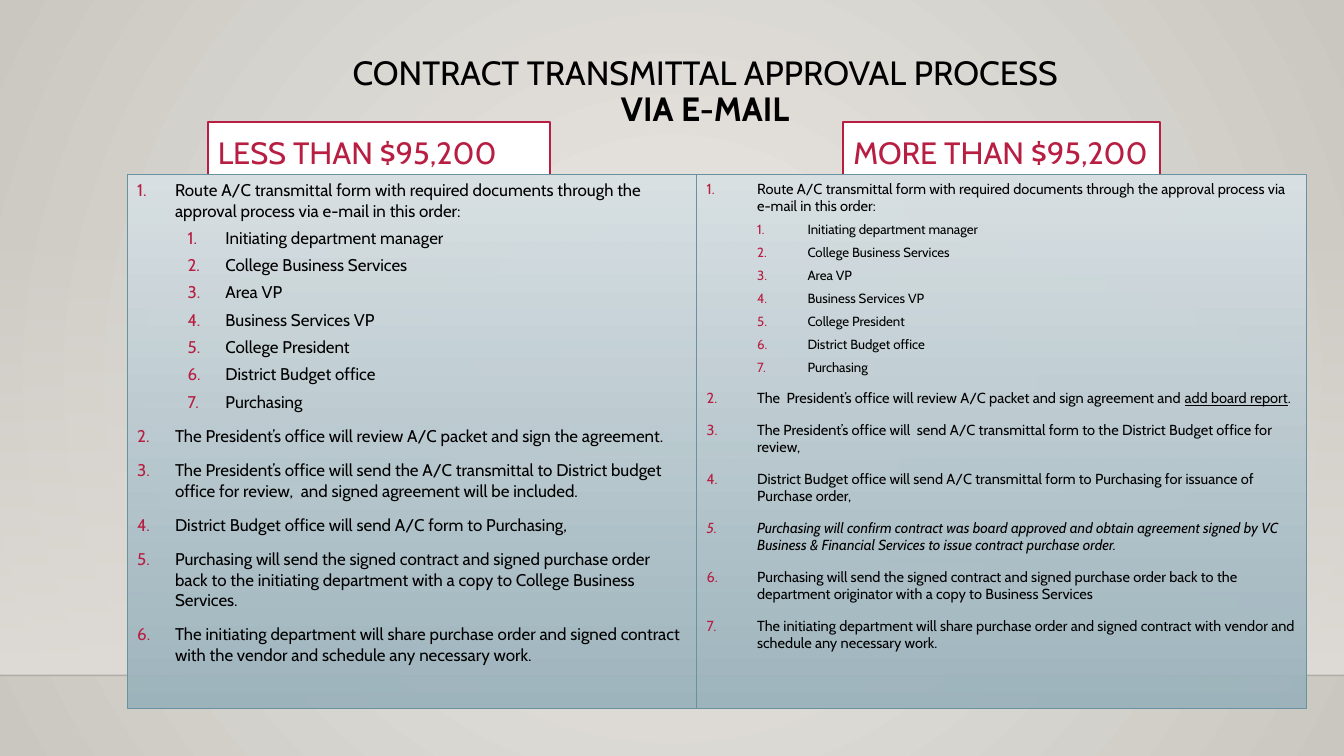
import pptx
import pptx.util
import pptx.dml.color
import pptx.enum.text
import pptx.enum.shapes
import pptx.oxml.ns
from lxml import etree

Pt = pptx.util.Pt
qn = pptx.oxml.ns.qn

FONT = "Cabin"
RED = "B71E42"
SLIDE_W, SLIDE_H = 960, 540
FLOOR_TOP, FLOOR_BOTTOM = 159, 482.4
HEADING_TOP, HEADING_H = 87.2, 38
PANEL_TOP, PANEL_H = 124.8, 381.6

TITLE = ("CONTRACT TRANSMITTAL APPROVAL PROCESS", "VIA E-MAIL")
ROUTE = ("Route A/C transmittal form with required documents through the "
         "approval process via e-mail in this order:")
APPROVERS = ["Initiating department manager", "College Business Services", "Area VP",
             "Business Services VP", "College President", "District Budget office",
             "Purchasing"]

COLUMNS = [
    {"heading": "LESS THAN $95,200", "heading_x": 148.4, "heading_w": 244.4,
     "x": 90.8, "w": 406.8, "indent": 27, "size": 12.1, "sub_size": 12.1,
     "steps": [
         [("The President’s office will review A/C packet and sign the agreement.", "")],
         [("The President’s office will send the A/C transmittal to District budget "
           "office for review,  and signed agreement will be included.", "")],
         [("District Budget office will send A/C form to Purchasing,", "")],
         [("Purchasing will send the signed contract and signed purchase order back to "
           "the initiating department with a copy to College Business Services.", "")],
         [("The initiating department will share purchase order and signed contract "
           "with the vendor and schedule any necessary work.", "")],
     ]},
    {"heading": "MORE THAN $95,200", "heading_x": 602.3, "heading_w": 226.3,
     "x": 497.6, "w": 435.6, "indent": 36, "size": 10.4, "sub_size": 9.5,
     "steps": [
         [("The  President’s office will review A/C packet and sign agreement and ", ""),
          ("add board report", "u"), (".", "")],
         [("The President’s office will  send A/C transmittal form to the District "
           "Budget office for review,", "")],
         [("District Budget office will send A/C transmittal form to Purchasing for "
           "issuance of Purchase order,", "")],
         [("Purchasing will confirm contract was board approved and obtain agreement "
           "signed by VC Business & Financial Services to issue contract purchase "
           "order.", "i")],
         [("Purchasing will send the signed contract and signed purchase order back to "
           "the department originator with a copy to Business Services", "")],
         [("The initiating department will share purchase order and signed contract "
           "with vendor and schedule any necessary work.", "")],
     ]},
]


def rgb(value):
    return pptx.dml.color.RGBColor.from_string(value)


def place(sp, x, y, w, h):
    sp.left, sp.top, sp.width, sp.height = Pt(x), Pt(y), Pt(w), Pt(h)


def gradient(fill, *colors):
    fill.gradient()
    fill.gradient_angle = 270
    for stop, color in zip(fill.gradient_stops, colors):
        stop.color.rgb = rgb(color)


def set_alpha(sp, color, percent):
    for el in sp.element.iter(qn("a:srgbClr")):
        if el.get("val") == color:
            etree.SubElement(el, qn("a:alpha")).set("val", str(percent * 1000))


def outline(sp, color, width):
    sp.line.color.rgb = rgb(color)
    sp.line.width = Pt(width)


def add_run(p, text, size, color="000000", style=""):
    r = p.add_run()
    r.text = text
    r.font.name = FONT
    r.font.size = Pt(size)
    r.font.color.rgb = rgb(color)
    r.font.bold = "b" in style
    r.font.italic = "i" in style
    r.font.underline = "u" in style


def frame(sp, anchor):
    tf = sp.text_frame
    tf.word_wrap = True
    tf.auto_size = pptx.enum.text.MSO_AUTO_SIZE.NONE
    tf.vertical_anchor = anchor
    return tf


def number(p, level, indent):
    pPr = p._p.get_or_add_pPr()
    pPr.set("marL", str(Pt(indent + 36 * level)))
    pPr.set("indent", str(-Pt(indent)))
    color = etree.SubElement(pPr, qn("a:buClr"))
    etree.SubElement(color, qn("a:srgbClr")).set("val", RED)
    etree.SubElement(pPr, qn("a:buFont")).set("typeface", "+mj-lt")
    etree.SubElement(pPr, qn("a:buAutoNum")).set("type", "arabicPeriod")
    p.level = level


def fill_panel(tf, col):
    items = [(0, [(ROUTE, "")])]
    items += [(1, [(name, "")]) for name in APPROVERS]
    items += [(0, step) for step in col["steps"]]
    for i, (level, runs) in enumerate(items):
        p = tf.add_paragraph() if i else tf.paragraphs[0]
        number(p, level, col["indent"])
        p.space_before = Pt((5 if level else 10) if i else 0)
        for text, style in runs:
            add_run(p, text, col["sub_size" if level else "size"], style=style)


def add_backdrop(s, title):
    fill = s.background.fill
    gradient(fill, "ECEAE7", "CAC7C1")
    lin = next(s.element.iter(qn("a:lin")))
    radial = etree.Element(qn("a:path"))
    radial.set("path", "circle")
    rect = etree.SubElement(radial, qn("a:fillToRect"))
    for side in "ltrb":
        rect.set(side, "50000")
    lin.getparent().replace(lin, radial)

    wall = s.shapes.add_shape(pptx.enum.shapes.MSO_SHAPE.RECTANGLE, 0, Pt(FLOOR_TOP),
                              Pt(SLIDE_W), Pt(FLOOR_BOTTOM - FLOOR_TOP))
    wall.shadow.inherit = False
    wall.line.fill.background()
    gradient(wall.fill, "DFDBD6", "DFDBD5")
    set_alpha(wall, "DFDBD6", 0)
    edge = s.shapes.add_connector(pptx.enum.shapes.MSO_CONNECTOR.STRAIGHT, 0,
                                  Pt(FLOOR_BOTTOM), Pt(SLIDE_W), Pt(FLOOR_BOTTOM))
    outline(edge, "000001", 1)
    set_alpha(edge, "000001", 20)
    etree.SubElement(edge.element.spPr, qn("a:effectLst"))
    for sp in (wall, edge):
        title.element.addprevious(sp.element)


def main():
    prs = pptx.Presentation()
    prs.slide_width, prs.slide_height = Pt(SLIDE_W), Pt(SLIDE_H)
    s = prs.slides.add_slide(prs.slide_layouts[4])
    anchors = pptx.enum.text.MSO_ANCHOR

    title = s.shapes.title
    add_backdrop(s, title)
    place(title, 125.3, 36.7, 756.7, 67)
    p = frame(title, anchors.TOP).paragraphs[0]
    p.alignment = pptx.enum.text.PP_ALIGN.CENTER
    p.line_spacing = 0.9
    add_run(p, TITLE[0], 24)
    p.add_line_break()
    add_run(p, TITLE[1], 24, style="b")

    for i, col in enumerate(COLUMNS):
        heading, panel = (s.placeholders[2 * i + k] for k in (1, 2))
        place(heading, col["heading_x"], HEADING_TOP, col["heading_w"], HEADING_H)
        heading.fill.solid()
        heading.fill.fore_color.rgb = rgb("FFFFFF")
        outline(heading, RED, 1.25)
        p = frame(heading, anchors.BOTTOM).paragraphs[0]
        p.space_before = Pt(0)
        add_run(p, col["heading"], 22, RED)

        place(panel, col["x"], PANEL_TOP, col["w"], PANEL_H)
        gradient(panel.fill, "D9E1E4", "9AB2BC")
        set_alpha(panel, "9AB2BC", 92)
        outline(panel, "6892A0", 0.75)
        fill_panel(frame(panel, anchors.TOP), col)

    prs.save("out.pptx")


if __name__ == "__main__":
    main()
